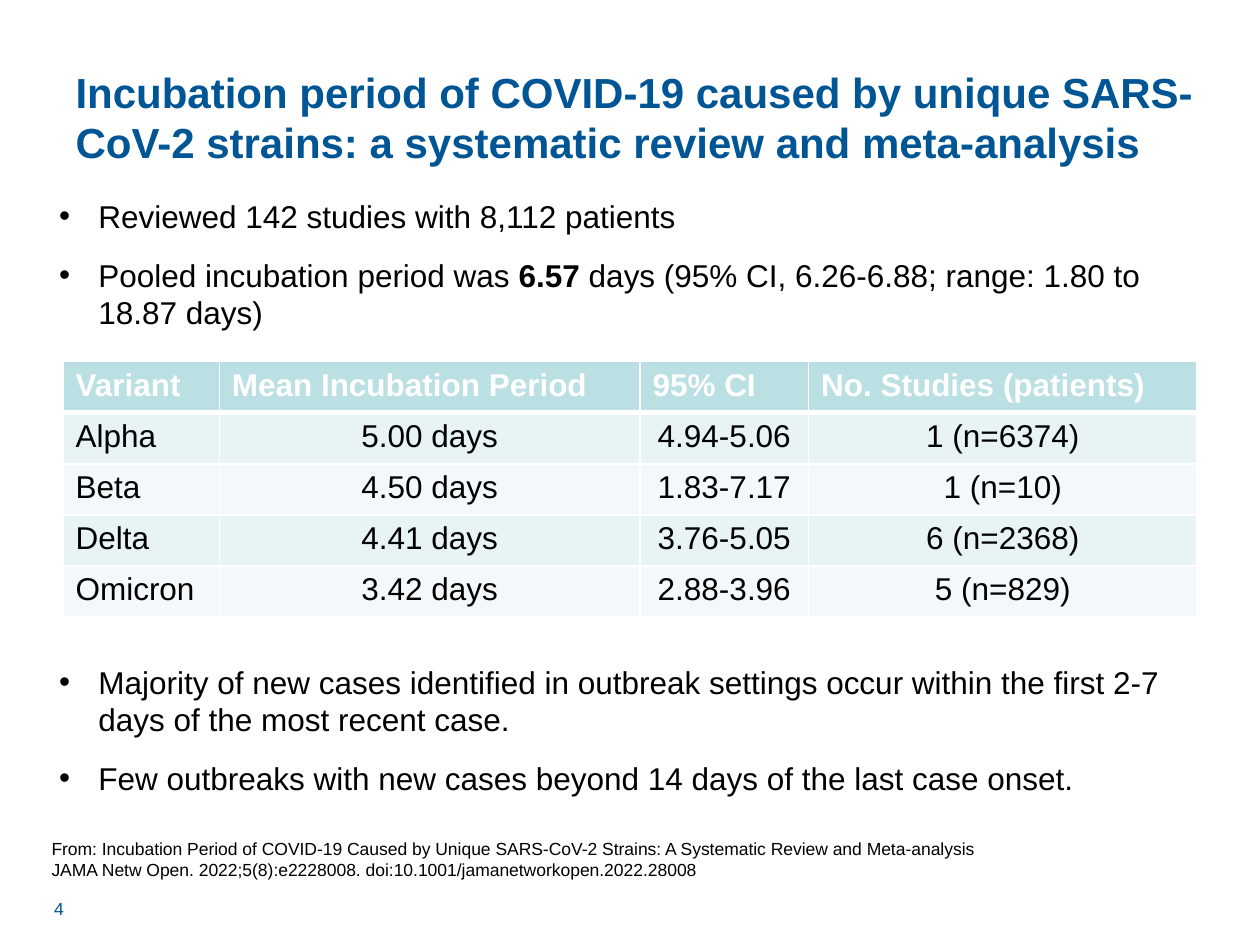
from dataclasses import dataclass

from lxml.etree import SubElement
from pptx import Presentation
from pptx.dml.color import RGBColor as Rgb
from pptx.enum.text import MSO_ANCHOR as Anchor, MSO_AUTO_SIZE as AutoSize, PP_ALIGN as Align
from pptx.oxml import parse_xml
from pptx.oxml.ns import qn
from pptx.util import Cm, Pt


@dataclass(frozen=True)
class Theme:
    face: str = "Arial"
    accent: str = "005595"
    ink: str = "000000"
    white: str = "FFFFFF"
    header: str = "BBE0E3"
    bands: tuple = ("E7F3F4", "F3F9FA")
    title_size: int = 24
    body_size: int = 18
    note_size: int = 10


THEME = Theme()
NAMESPACE = "http://schemas.openxmlformats.org/drawingml/2006/main"

TITLE = (
    "Incubation period of COVID-19 caused by unique SARS-CoV-2 strains: "
    "a systematic review and meta-analysis"
)
FINDINGS = [
    [("Reviewed 142 studies with 8,112 patients", False)],
    [
        ("Pooled incubation period was ", False),
        ("6.57 ", True),
        ("days (95% CI, 6.26-6.88; range: 1.80 to 18.87 days)", False),
    ],
]
OUTBREAKS = [
    [("Majority of new cases identified in outbreak settings occur within "
      "the first 2-7 days of the most recent case.", False)],
    [("Few outbreaks with new cases beyond 14 days of the last case onset.", False)],
]
VARIANTS = [
    ("Variant", "Mean Incubation Period", "95% CI", "No. Studies (patients)"),
    ("Alpha", "5.00 days", "4.94-5.06", "1 (n=6374)"),
    ("Beta", "4.50 days", "1.83-7.17", "1 (n=10)"),
    ("Delta", "4.41 days", "3.76-5.05", "6 (n=2368)"),
    ("Omicron", "3.42 days", "2.88-3.96", "5 (n=829)"),
]
COLUMN_WIDTHS = (3.15, 8.48, 3.4, 7.83)
CITATION = (
    "From: Incubation Period of COVID-19 Caused by Unique SARS-CoV-2 Strains: "
    "A Systematic Review and Meta-analysis\v"
    "JAMA Netw Open. 2022;5(8):e2228008. doi:10.1001/jamanetworkopen.2022.28008"
)


def apply_format(target, values):
    for name, value in values.items():
        setattr(target, name, value)


def style_font(font, size, color, bold=False):
    apply_format(font, {"name": THEME.face, "size": Pt(size), "bold": bold})
    font.color.rgb = Rgb.from_string(color)


def place(shape, box):
    apply_format(shape, dict(zip(("left", "top", "width", "height"), map(Cm, box))))


def add_title(page, box):
    title = page.shapes.title
    place(title, box)
    apply_format(title.text_frame, {
        "text": TITLE,
        "word_wrap": True,
        "auto_size": AutoSize.NONE,
        "vertical_anchor": Anchor.MIDDLE,
    })
    para = title.text_frame.paragraphs[0]
    para.alignment = Align.LEFT
    style_font(para.runs[0].font, THEME.title_size, THEME.accent, True)


def fill_list(holder, box, items):
    place(holder, box)
    frame = holder.text_frame
    apply_format(frame, {"word_wrap": True, "auto_size": AutoSize.NONE})
    for index, item in enumerate(items):
        para = frame.paragraphs[0] if index == 0 else frame.add_paragraph()
        layout = para._p.get_or_add_pPr()
        layout.set("marL", str(Cm(0.79)))
        layout.set("indent", str(-Cm(0.79)))
        apply_format(para, {
            "space_before": Pt(12 if index else 0),
            "space_after": Pt(0),
        })
        SubElement(layout, qn("a:buChar")).set("char", "•")
        for text, bold in item:
            span = para.add_run()
            span.text = text
            style_font(span.font, THEME.body_size, THEME.ink, bold)


def add_borders(cell, widths):
    properties = cell._tc.get_or_add_tcPr()
    for position, (side, width) in enumerate(widths.items()):
        properties.insert(position, parse_xml(
            f'<a:ln{side} xmlns:a="{NAMESPACE}" w="{Pt(width)}"><a:solidFill>'
            f'<a:srgbClr val="{THEME.white}"/></a:solidFill></a:ln{side}>'
        ))


def add_variant_table(page, box):
    table = page.shapes.add_table(
        len(VARIANTS), len(COLUMN_WIDTHS), *map(Cm, box)
    ).table
    for column, width in zip(table.columns, COLUMN_WIDTHS):
        column.width = Cm(width)
    for row_index, values in enumerate(VARIANTS):
        is_header = row_index == 0
        table.rows[row_index].height = Cm(box[3] / len(VARIANTS))
        shade = THEME.header if is_header else THEME.bands[(row_index - 1) % 2]
        for column_index, value in enumerate(values):
            cell = table.cell(row_index, column_index)
            cell.text = value
            cell.fill.solid()
            cell.fill.fore_color.rgb = Rgb.from_string(shade)
            add_borders(cell, {
                "L": 1,
                "R": 1,
                "T": 3 if row_index == 1 else 1,
                "B": 3 if is_header else 1,
            })
            para = cell.text_frame.paragraphs[0]
            para.alignment = Align.LEFT if is_header or column_index == 0 else Align.CENTER
            color = THEME.white if is_header else THEME.ink
            style_font(para.runs[0].font, THEME.body_size, color, is_header)


def add_note(page, box, text, color, margins):
    frame = page.shapes.add_textbox(*map(Cm, box)).text_frame
    apply_format(frame, {"word_wrap": True, "text": text})
    apply_format(frame, {name: Cm(value) for name, value in margins.items()})
    for span in frame.paragraphs[0].runs:
        style_font(span.font, THEME.note_size, color)


def build_incubation_slide(deck):
    page = deck.slides.add_slide(deck.slide_layouts.get_by_name("Two Content"))
    add_title(page, (1.27, 0.76, 23.19, 3.18))
    fill_list(page.placeholders[1], (0.94, 3.84, 22.86, 3), FINDINGS)
    add_variant_table(page, (1.27, 7.29, 22.86, 5.15))
    fill_list(page.placeholders[2], (0.94, 13.23, 22.86, 3), OUTBREAKS)
    add_note(page, (0.33, 16.71, 22.12, 1.14), CITATION, THEME.ink, {
        "margin_left": 0.71,
        "margin_top": 0.18,
        "margin_right": 0.36,
        "margin_bottom": 0,
    })
    add_note(page, (0.84, 17.98, 5.92, 0.69), "4", THEME.accent, {})


def main():
    deck = Presentation()
    apply_format(deck, {"slide_width": Cm(25.4), "slide_height": Cm(19.05)})
    build_incubation_slide(deck)
    deck.save("out.pptx")


if __name__ == "__main__":
    main()
